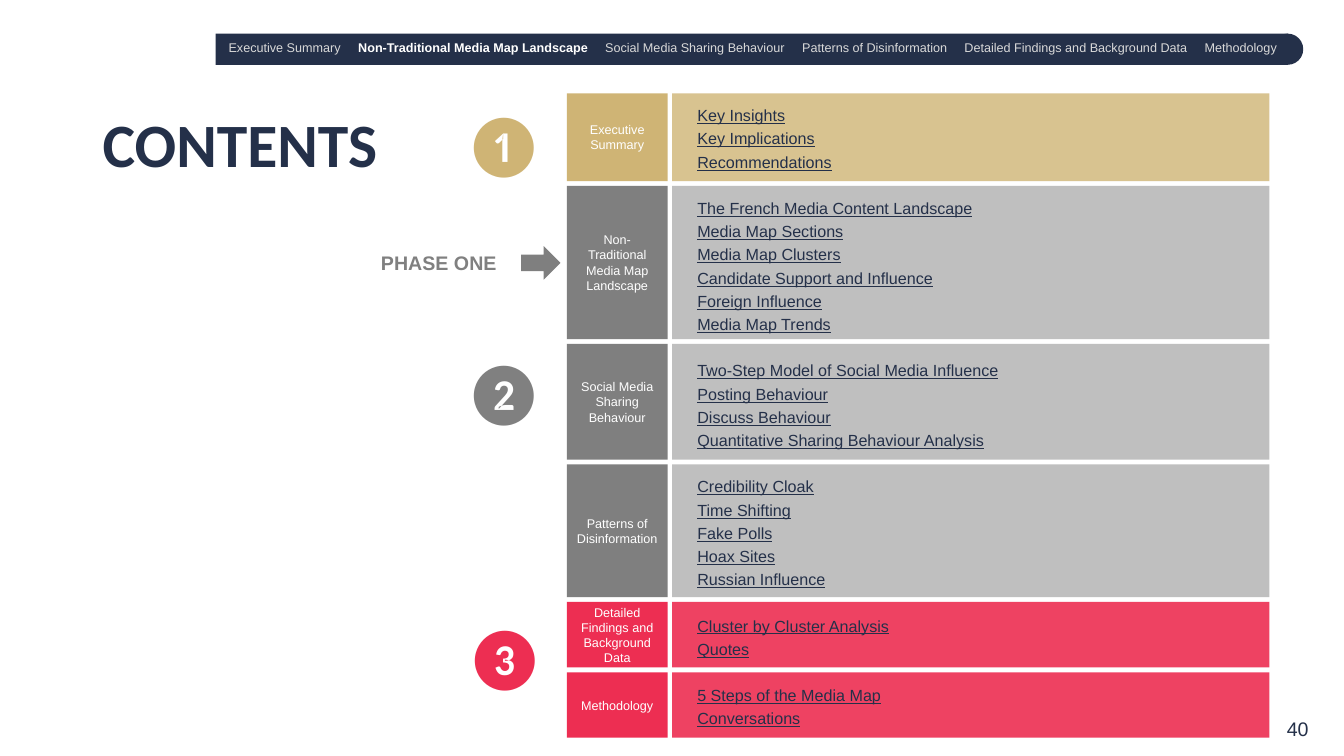
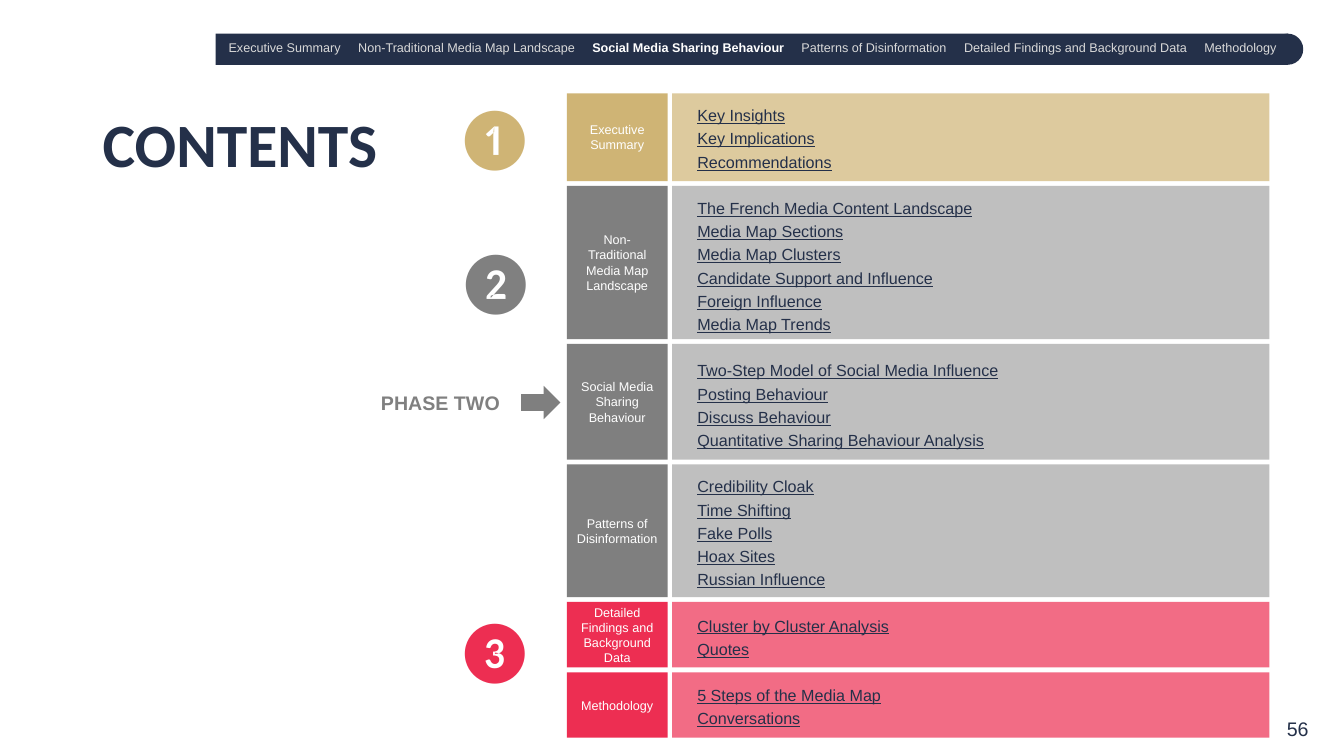
from lxml.etree import SubElement
from pptx import Presentation
from pptx.dml.color import RGBColor
from pptx.enum.shapes import MSO_SHAPE
from pptx.enum.text import MSO_ANCHOR, PP_ALIGN
from pptx.oxml.ns import qn
from pptx.util import Pt

NAVY, GOLD, RED = "243049", "CFB475", "ED2E52"
GREY, MID_GREY, LIGHT_GREY = "7F7F7F", "808080", "BFBFBF"
WHITE, PALE = "FFFFFF", "D9D9D9"

ROW_TOP, ROW_GAP = 66.8, 3.4
SECTIONS = [
    ("Executive Summary", 62.6, GOLD,
     ["Key Insights", "Key Implications", "Recommendations"]),
    ("Non-Traditional Media Map Landscape", 109.4, GREY,
     ["The French Media Content Landscape", "Media Map Sections",
      "Media Map Clusters", "Candidate Support and Influence",
      "Foreign Influence", "Media Map Trends"]),
    ("Social Media Sharing Behaviour", 82.8, GREY,
     ["Two-Step Model of Social Media Influence", "Posting Behaviour",
      "Discuss Behaviour", "Quantitative Sharing Behaviour Analysis"]),
    ("Patterns of Disinformation", 94.8, GREY,
     ["Credibility Cloak", "Time Shifting", "Fake Polls", "Hoax Sites",
      "Russian Influence"]),
    ("Detailed Findings and Background Data", 46.8, RED,
     ["Cluster by Cluster Analysis", "Quotes"]),
    ("Methodology", 46.8, RED,
     ["5 Steps of the Media Map", "Conversations"]),
]

# Per slide: page, active section, phase, phase top, nav tab stops,
# opacity of the gold and red rows, left and top of each number
PAGES = [
    ("40", 1, "PHASE ONE", 175.7, [92.6, 269, 409.7, 525.6, 697.2],
     {GOLD: 80, RED: 90},
     [("❶", GOLD, 324, 72), ("❷", MID_GREY, 324, 249.1),
      ("❸", RED, 324.7, 438.5)]),
    ("56", 2, "PHASE TWO", 275.4, [92.6, 259.8, 409.2, 525.4, 697],
     {GOLD: 70, RED: 70},
     [("❶", GOLD, 317.5, 67), ("❷", MID_GREY, 318.2, 169.9),
      ("❸", RED, 317.5, 433.4)]),
]


def add_box(slide, left, top, width, height, preset=None, fill=None, opacity=100):
    """Add a filled preset shape, or a text box when no preset is given."""
    frame = Pt(left), Pt(top), Pt(width), Pt(height)
    if preset is None:
        box = slide.shapes.add_textbox(*frame)
    else:
        box = slide.shapes.add_shape(preset, *frame)
        box.shadow.inherit = False
        box.line.fill.background()
        box.fill.solid()
        box.fill.fore_color.rgb = RGBColor.from_string(fill)
        if opacity < 100:
            color = box.fill._xPr.find(".//" + qn("a:srgbClr"))
            SubElement(color, qn("a:alpha"), val=str(opacity * 1000))
    box.text_frame.word_wrap = True
    return box


def add_run(paragraph, text, size, color, bold=False, name="Arial", underline=False):
    run = paragraph.add_run()
    run.text = text
    run.font.size = Pt(size)
    run.font.name = name
    run.font.bold = bold
    run.font.underline = underline
    run.font.color.rgb = RGBColor.from_string(color)


prs = Presentation()
prs.slide_width, prs.slide_height = Pt(960), Pt(540)

for page, active, phase, phase_top, stops, opacities, numbers in PAGES:
    slide = prs.slides.add_slide(prs.slide_layouts[6])

    # Navigation bar
    add_box(slide, 154, 24, 766, 22.3, MSO_SHAPE.RECTANGLE, NAVY)
    add_box(slide, 908.6, 24, 22.3, 22.3, MSO_SHAPE.OVAL, NAVY)
    nav = add_box(slide, 156.2, 24.5, 771, 19.4).text_frame
    nav.vertical_anchor = MSO_ANCHOR.MIDDLE
    nav_line = nav.paragraphs[0]
    tabs = SubElement(nav_line._p.get_or_add_pPr(), qn("a:tabLst"))
    for stop in stops:
        SubElement(tabs, qn("a:tab"), pos=str(Pt(stop)), algn="l")
    for index, (section, *_) in enumerate(SECTIONS):
        current = index == active
        add_run(nav_line, "\t" + section if index else section, 9,
                WHITE if current else PALE, bold=current)

    # Title and page number
    title = add_box(slide, 66.2, 78, 240, 55.5).text_frame.paragraphs[0]
    title.line_spacing = 0.9
    add_run(title, "CONTENTS", 44, NAVY, bold=True, name="Calibri")
    page_number = add_box(slide, 856.8, 508.3, 85, 24.5).text_frame.paragraphs[0]
    page_number.alignment = PP_ALIGN.RIGHT
    add_run(page_number, page, 14, NAVY)

    # Section rows
    top = ROW_TOP
    for section, height, color, _ in SECTIONS:
        add_box(slide, 480.2, top, 426.6, height, MSO_SHAPE.RECTANGLE,
                LIGHT_GREY if color == GREY else color, opacities.get(color, 100))
        label = add_box(slide, 404.9, top, 72, height, MSO_SHAPE.RECTANGLE, color)
        label.text_frame.vertical_anchor = MSO_ANCHOR.MIDDLE
        label_line = label.text_frame.paragraphs[0]
        label_line.alignment = PP_ALIGN.CENTER
        add_run(label_line, section, 9, WHITE)
        top += height + ROW_GAP

    # Topics, with a gap before each new section
    topic_list = add_box(slide, 491, 69.1, 308.2, 460).text_frame
    for index, (*_, topics) in enumerate(SECTIONS):
        for position, topic in enumerate(topics):
            first = index == position == 0
            line = topic_list.paragraphs[0] if first else topic_list.add_paragraph()
            line.line_spacing = Pt(16.6)
            if index and position == 0:
                line.space_before = Pt(16.4)
            add_run(line, topic, 11.5, NAVY, underline=True)

    # Phase marker and numbers
    add_box(slide, 372.2, phase_top + 0.2, 28.1, 23.8, MSO_SHAPE.RIGHT_ARROW, GREY)
    phase_label = add_box(slide, 265, phase_top, 107, 24.5)
    add_run(phase_label.text_frame.paragraphs[0], phase, 14, MID_GREY, bold=True)
    for digit, color, left, number_top in numbers:
        number = add_box(slide, left, number_top, 58.3, 60.5)
        add_run(number.text_frame.paragraphs[0], digit, 44, color, name="Calibri")

prs.save("out.pptx")
